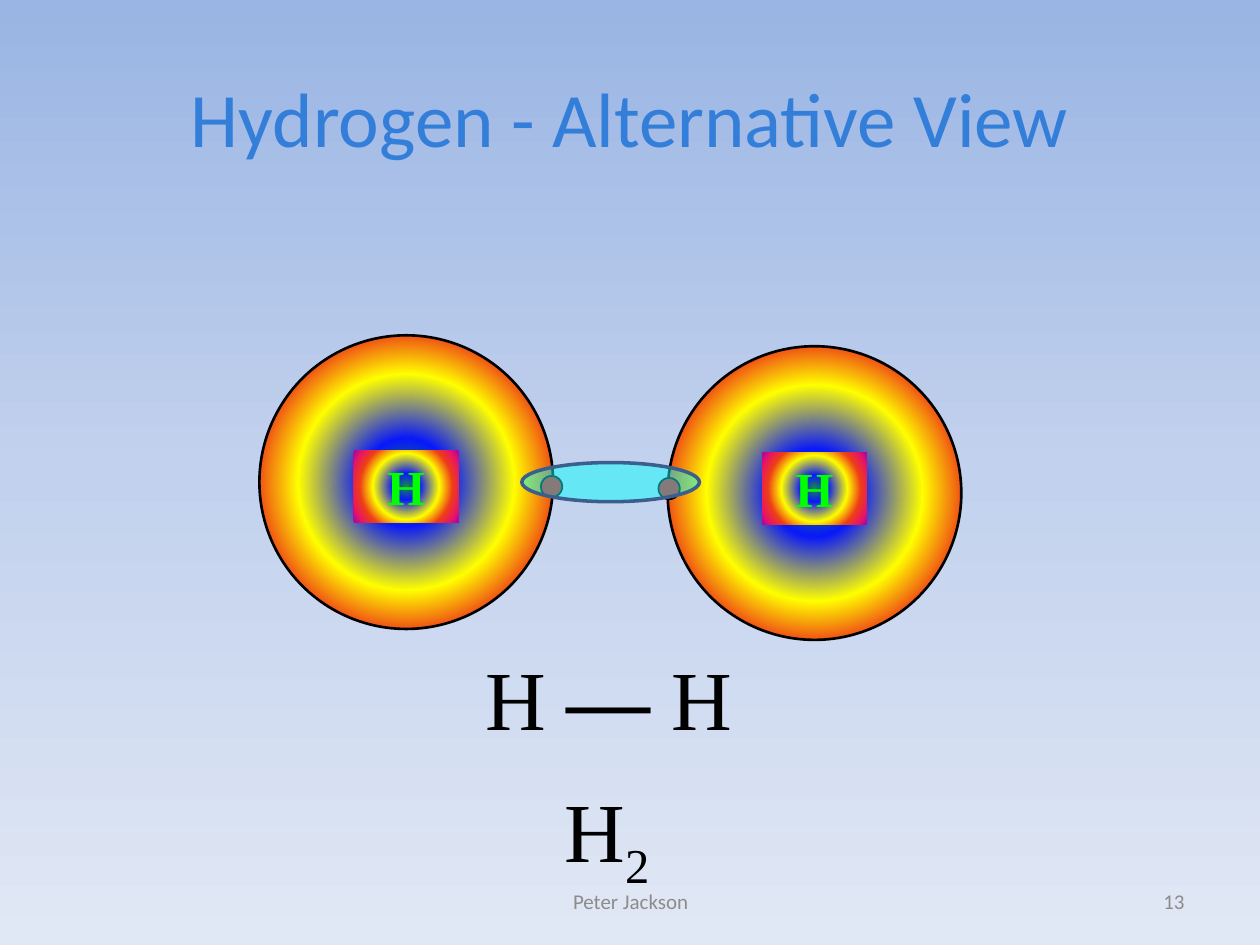
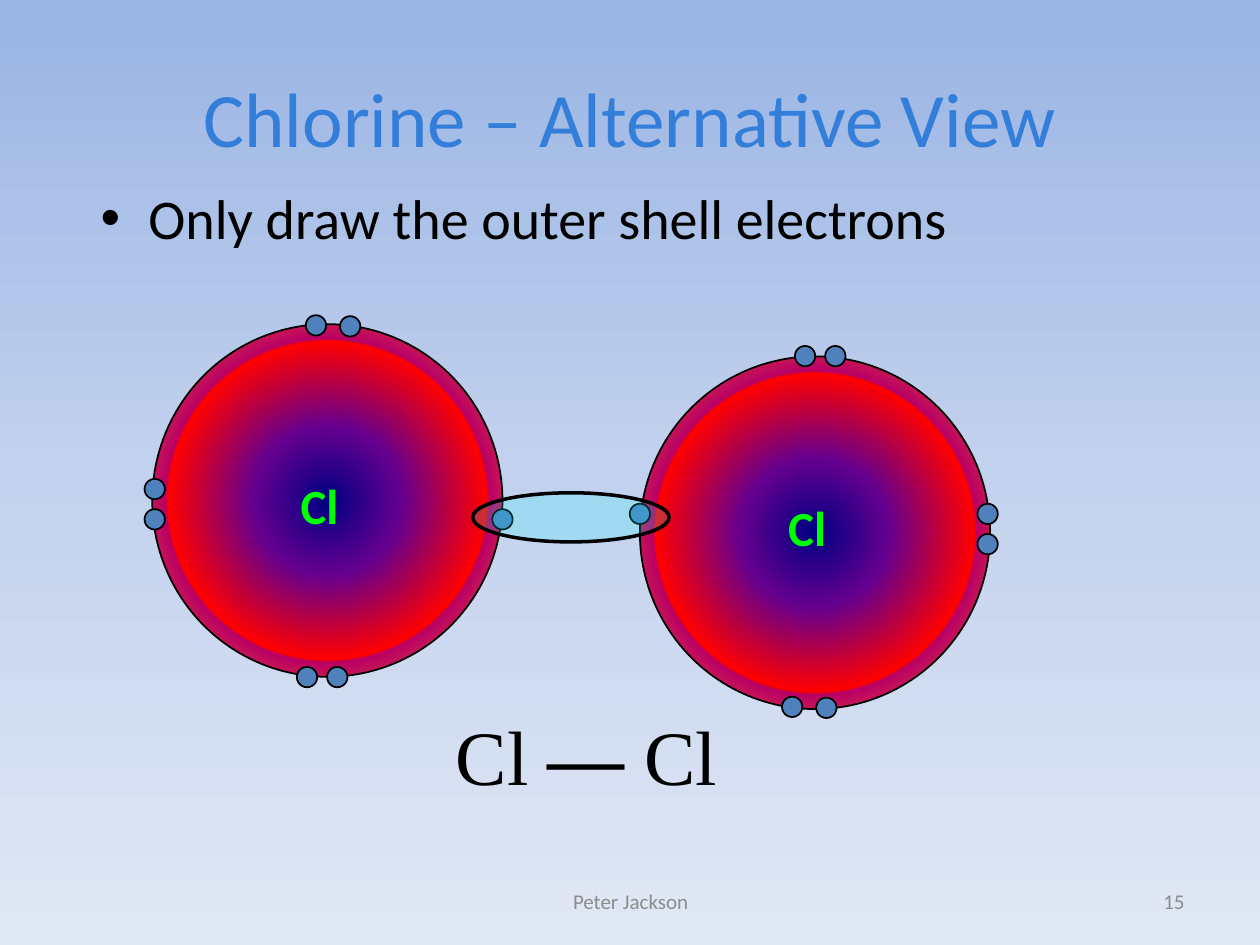
"""Builds two slides on the covalent bonds of hydrogen and chlorine."""
from dataclasses import dataclass

from lxml.etree import SubElement
from pptx import Presentation
from pptx.dml.color import RGBColor
from pptx.enum.shapes import MSO_SHAPE as Shape
from pptx.enum.text import MSO_ANCHOR as Anchor, PP_ALIGN as Align
from pptx.oxml.ns import qn
from pptx.util import Cm, Pt


@dataclass(frozen=True)
class Theme:
    sans: str = "Calibri"
    serif: str = "Times New Roman"
    title: str = "337ED9"
    ink: str = "000000"
    muted: str = "8C8C8C"
    symbol: str = "00FF00"
    bond: str = "00FFFF"
    bond_edge: str = "3A5F8C"
    hydrogen_electron: str = "FF0000"
    chlorine_electron: str = "4F81BD"
    sky: tuple = ((0, "9AB5E4"), (50, "C2D1ED"), (100, "E1E8F5"))
    rainbow: tuple = ((0, "A603AB"), (0, "1A8D48"), (21, "0819FB"), (52, "FFFF00"),
                      (73, "EE3F17"), (88, "E81766"), (100, "A603AB"))
    ember: tuple = ((0, "000082"), (30, "66008F"), (64, "FF0000"),
                    (65, "BA0066"), (100, "FF8200"))
    title_size: int = 44
    body_size: int = 32
    hydrogen_formula_size: int = 48
    chlorine_formula_size: int = 44
    symbol_size: int = 28
    footer_size: int = 12


class Painter:
    def __init__(self, theme):
        self.theme = theme
        self.deck = Presentation()
        self.deck.slide_width, self.deck.slide_height = Cm(25.4), Cm(19.05)
        self.page = None
        self.shapes = None

    def start_page(self, title, number):
        theme = self.theme
        self.page = self.deck.slides.add_slide(self.deck.slide_layouts[6])
        self.shapes = self.page.shapes
        self.page.background.fill.solid()
        self.gradient(self.page.element.find(".//" + qn("p:bgPr")), theme.sky, radial=False)
        self.text((1.27, 0.76, 22.86, 3.18), [title], theme.title_size, theme.title,
                  align=Align.CENTER, anchor=Anchor.MIDDLE)
        for frame, words, align in (((18.21, 17.65, 5.92, 1.02), number, Align.RIGHT),
                                    ((8.69, 17.65, 8.05, 1.02), "Peter Jackson", Align.CENTER)):
            self.text(frame, [words], theme.footer_size, theme.muted,
                      align=align, anchor=Anchor.MIDDLE)

    def start_group(self):
        self.shapes = self.page.shapes.add_group_shape().shapes

    def end_group(self):
        self.shapes = self.page.shapes

    def gradient(self, holder, stops, radial=True):
        solid = holder.find(qn("a:solidFill"))
        fill = SubElement(holder, qn("a:gradFill"), rotWithShape="1")
        stop_list = SubElement(fill, qn("a:gsLst"))
        for position, color in stops:
            stop = SubElement(stop_list, qn("a:gs"), pos=str(position * 1000))
            SubElement(stop, qn("a:srgbClr"), val=color)
        if radial:
            course = SubElement(fill, qn("a:path"), {"path": "circle"})
            SubElement(course, qn("a:fillToRect"), dict.fromkeys("ltrb", "50000"))
        else:
            SubElement(fill, qn("a:lin"), ang="5400000", scaled="0")
        holder.replace(solid, fill)

    def shape(self, kind, center, size, fill, line=None, weight=1, alpha=None):
        (x, y), (width, height) = center, size
        shape = self.shapes.add_shape(kind, Cm(x - width / 2), Cm(y - height / 2),
                                      Cm(width), Cm(height))
        shape.shadow.inherit = False
        shape.fill.solid()
        if isinstance(fill, tuple):
            self.gradient(shape.element.spPr, fill)
        else:
            shape.fill.fore_color.rgb = RGBColor.from_string(fill)
        if alpha:
            color = shape.element.spPr.find(".//" + qn("a:srgbClr"))
            SubElement(color, qn("a:alpha"), val=str(alpha * 1000))
        if line:
            shape.line.color.rgb = RGBColor.from_string(line)
            shape.line.width = Pt(weight)
        else:
            shape.line.fill.background()
        return shape

    def ellipse(self, center, size, fill, line=None, weight=1, alpha=None):
        return self.shape(Shape.OVAL, center, size, fill, line or self.theme.ink, weight, alpha)

    def label(self, box, spans, size, color, font, bold=None, align=Align.LEFT,
              anchor=Anchor.TOP):
        frame = box.text_frame
        frame.word_wrap = True
        frame.vertical_anchor = anchor
        para = frame.paragraphs[0]
        para.alignment = align
        para.font.size, para.font.name, para.font.bold = Pt(size), font, bold
        para.font.color.rgb = RGBColor.from_string(color)
        for words in spans:
            para.add_run().text = words
        return para

    def text(self, frame, spans, size, color, font=None, **style):
        box = self.shapes.add_textbox(*map(Cm, frame))
        return self.label(box, spans, size, color, font or self.theme.sans, **style)

    def bullet(self, frame, words):
        para = self.text(frame, [words], self.theme.body_size, self.theme.ink)
        properties = para._p.get_or_add_pPr()
        properties.set("marL", str(Cm(0.96)))
        properties.set("indent", str(-Cm(0.96)))
        SubElement(properties, qn("a:buFont"), typeface="Arial")
        SubElement(properties, qn("a:buChar"), char="•")
        properties.append(properties.find(qn("a:defRPr")))

    def formula(self, frame, spans, size):
        return self.text(frame, spans, size, self.theme.ink, self.theme.serif)

    def bonded_formula(self, frame, symbol, size):
        para = self.formula(frame, [f"{symbol} ", "—", f" {symbol}"], size)
        para.runs[1].font.bold = True

    def hydrogen_atom(self, center, side):
        theme = self.theme
        x, y = center
        self.start_group()
        self.ellipse(center, (5.92, 5.92), theme.rainbow, weight=1.5)
        nucleus = self.shape(Shape.RECTANGLE, (x, y + side * 0.09), (2.11, 1.45), theme.rainbow)
        self.label(nucleus, ["H"], theme.symbol_size, theme.symbol, theme.serif,
                   bold=True, align=Align.CENTER)
        self.ellipse((x + side * 2.93, y + side * 0.09), (0.43, 0.43), theme.hydrogen_electron)
        self.end_group()

    def chlorine_atom(self, center, side):
        theme = self.theme
        x, y = center
        self.start_group()
        self.ellipse(center, (7.06, 7.11), theme.ember)
        for across, down in OUTER_SHELL:
            self.ellipse((x + side * across, y + side * down), (0.41, 0.41),
                         theme.chlorine_electron)
        self.text((x - 0.79, y - 0.73 + side * 0.11, 1.57, 1.45), ["Cl"],
                  theme.symbol_size, theme.symbol, bold=True)
        self.end_group()


OUTER_SHELL = ((0.46, -3.51), (-0.23, -3.53), (-3.48, 0.38), (-3.48, -0.23),
               (0.2, 3.56), (-0.41, 3.56), (3.53, 0.38))


def hydrogen_page(painter):
    theme = painter.theme
    painter.start_page("Hydrogen - Alternative View", "13")
    painter.hydrogen_atom((8.19, 9.72), 1)
    painter.hydrogen_atom((16.42, 9.94), -1)
    painter.ellipse((12.31, 9.72), (3.58, 0.79), theme.bond, theme.bond_edge, 2, alpha=48)
    painter.bonded_formula((9.53, 12.9, 6.78, 2.29), "H", theme.hydrogen_formula_size)
    molecule = painter.formula((11.13, 15.57, 2.39, 2.29), ["H", "2"],
                               theme.hydrogen_formula_size)
    molecule.runs[1].font._element.set("baseline", "-25000")


def chlorine_page(painter):
    theme = painter.theme
    painter.start_page("Chlorine – Alternative View", "15")
    painter.bullet((1.78, 3.58, 22.86, 2.79), "Only draw the outer shell electrons")
    painter.bonded_formula((8.94, 14.15, 6.35, 2.11), "Cl", theme.chlorine_formula_size)
    painter.chlorine_atom((6.6, 10.09), 1)
    painter.chlorine_atom((16.43, 10.74), -1)
    painter.ellipse((11.51, 10.43), (3.96, 0.99), theme.bond, weight=2, alpha=18)


def main():
    painter = Painter(Theme())
    hydrogen_page(painter)
    chlorine_page(painter)
    painter.deck.save("out.pptx")


if __name__ == "__main__":
    main()
